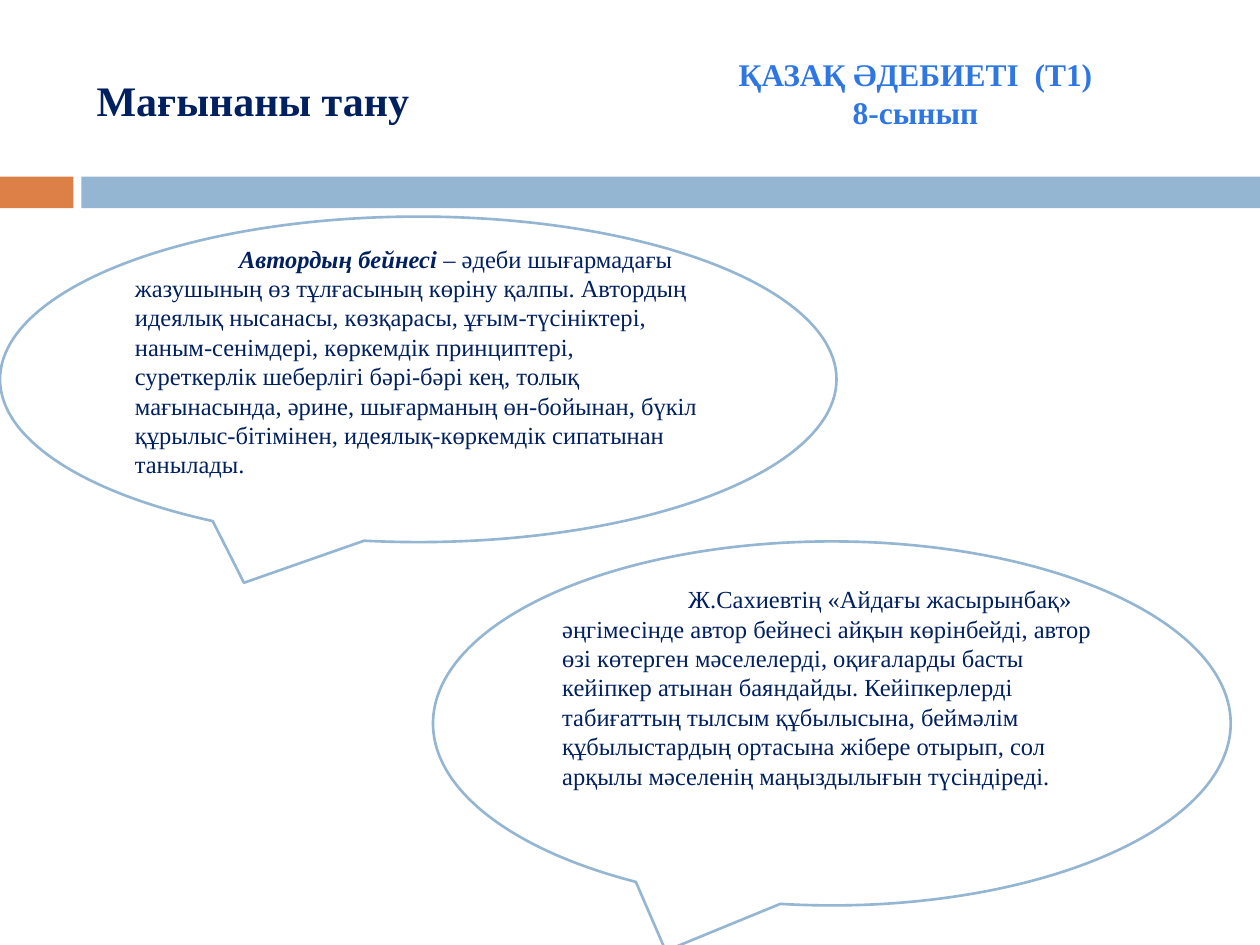
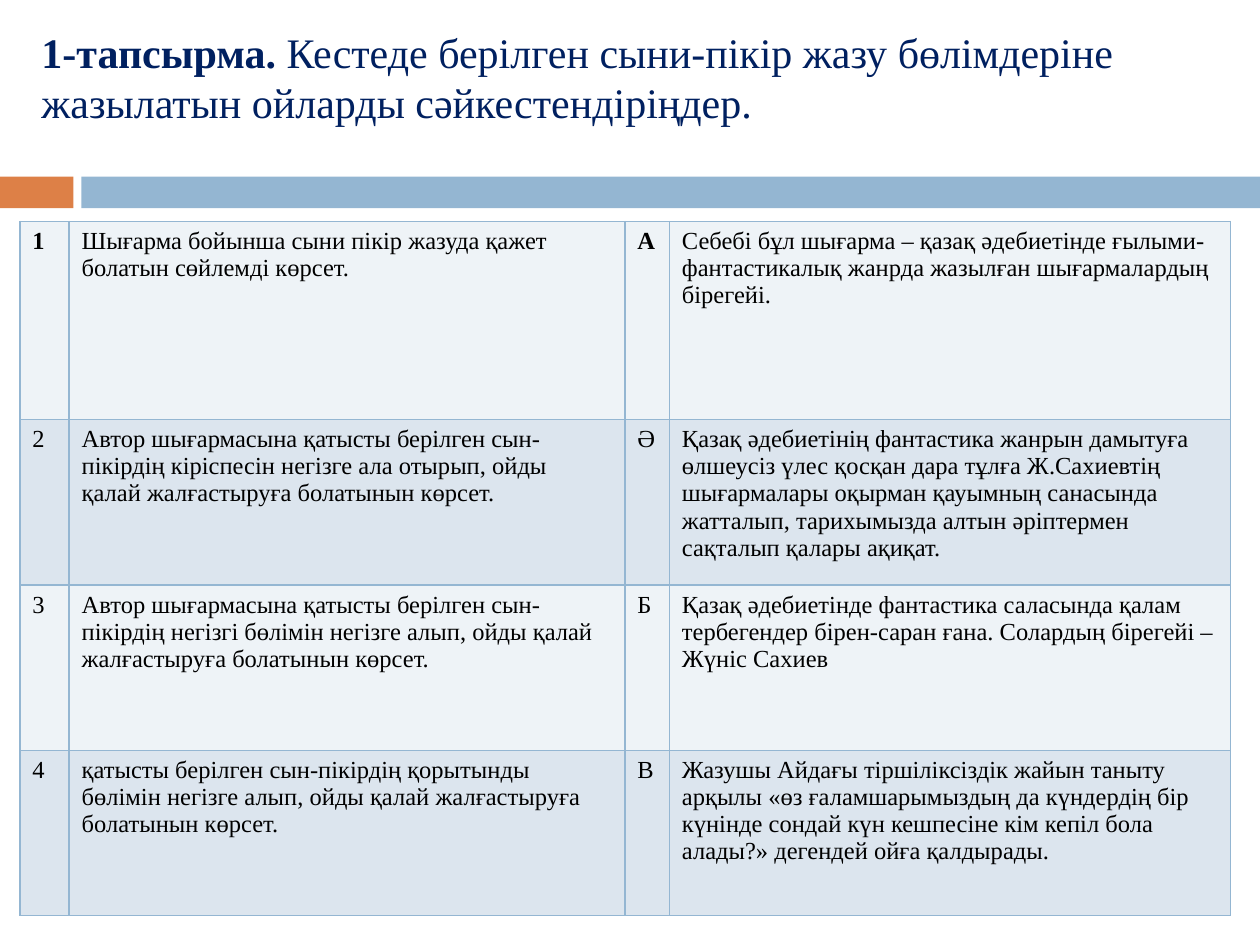
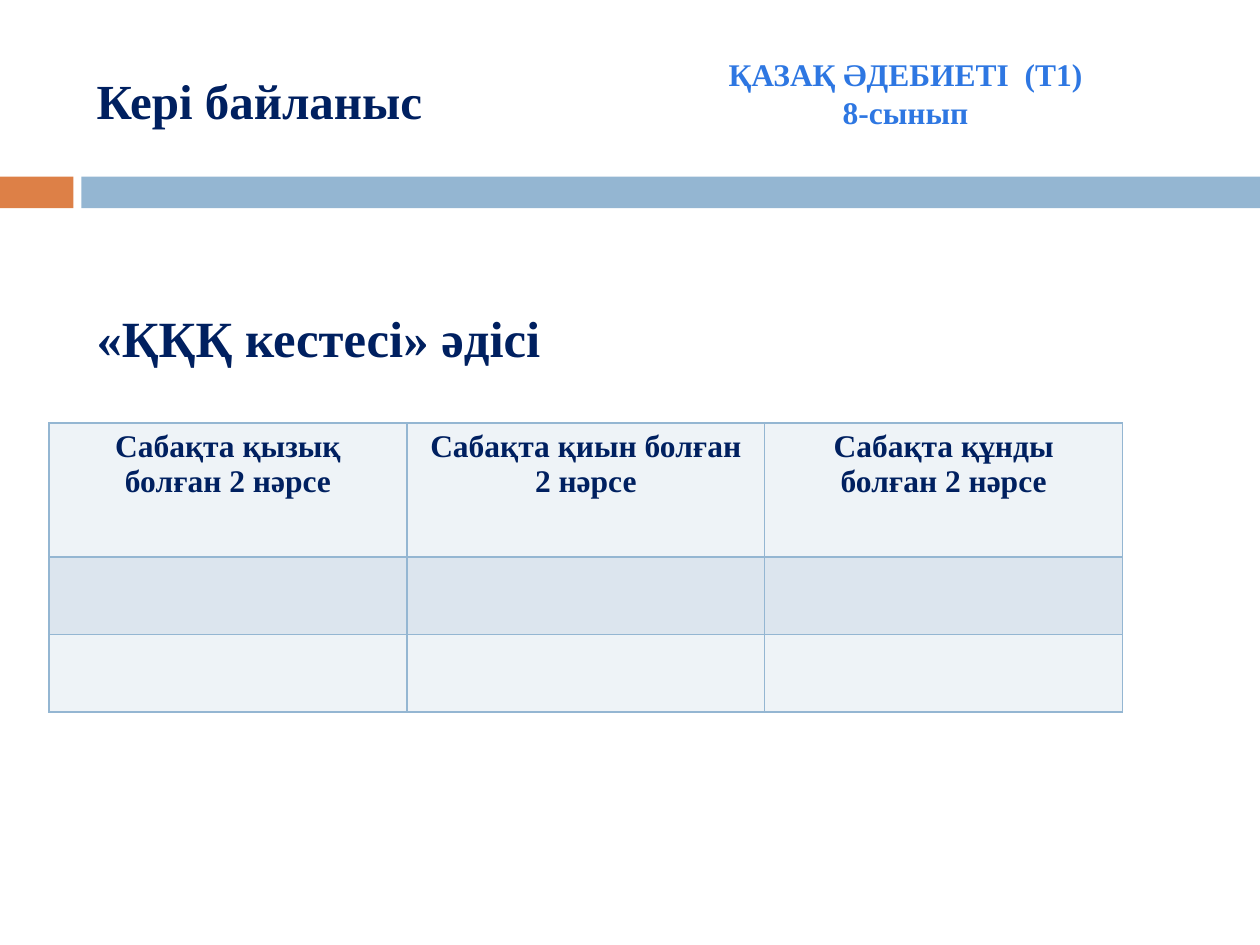
from pptx import Presentation
from pptx.dml.color import RGBColor
from pptx.enum.shapes import MSO_SHAPE
from pptx.enum.text import MSO_ANCHOR, MSO_AUTO_SIZE, PP_ALIGN
from pptx.oxml import parse_xml
from pptx.oxml.ns import nsdecls
from pptx.util import Pt

LEFT, CENTER = PP_ALIGN.LEFT, PP_ALIGN.CENTER
MIDDLE, TOP = MSO_ANCHOR.MIDDLE, MSO_ANCHOR.TOP
FIXED = MSO_AUTO_SIZE.NONE
RECT, BUBBLE = MSO_SHAPE.RECTANGLE, MSO_SHAPE.OVAL_CALLOUT
FONT = "Times New Roman"
HEX = {
    "white": "FFFFFF", "black": "000000", "navy": "002060", "sky": "2E77E2",
    "blue": "94B6D2", "orange": "DD8047", "light": "EEF3F7", "mid": "DCE5EE",
}
RGB = {name: RGBColor.from_string(code) for name, code in HEX.items()}


def write(frame, paras, size, color="navy", align=LEFT):
    """Fill a frame; each paragraph is a list of (text, style), style from "bi"."""
    frame.word_wrap = True
    for i, runs in enumerate(paras):
        para = frame.add_paragraph() if i else frame.paragraphs[0]
        para.alignment = align
        for text, style in runs:
            run = para.add_run()
            run.text = text
            font = run.font
            font.name, font.size = FONT, Pt(size)
            font.bold, font.italic = "b" in style, "i" in style
            font.color.rgb = RGB[color]


def grid(slide, left, top, cols, rows, cells, size, color, align):
    """Add a banded table with thin blue borders."""
    frame = slide.shapes.add_table(len(rows), len(cols), Pt(left), Pt(top),
                                   Pt(sum(cols)), Pt(sum(rows)))
    table = frame.table
    table.first_row = table.horz_banding = False
    for col, width in zip(table.columns, cols):
        col.width = Pt(width)
    for r, (row, height) in enumerate(zip(table.rows, rows)):
        row.height = Pt(height)
        for c, cell in enumerate(row.cells):
            props = cell._tc.get_or_add_tcPr()
            for side in "LRTB":
                props.append(parse_xml(
                    f'<a:ln{side} {nsdecls("a")} w="{Pt(1)}"><a:solidFill>'
                    f'<a:srgbClr val="{HEX["blue"]}"/></a:solidFill></a:ln{side}>'))
            cell.fill.solid()
            cell.fill.fore_color.rgb = RGB["mid" if r % 2 else "light"]
            if r < len(cells):
                write(cell.text_frame, cells[r][c], size, color, align)


deck = Presentation()
deck.slide_width, deck.slide_height = Pt(720), Pt(540)

# Slides and their titles: layout, left, width, bottom inset, size, runs
heads = [
    (5, 48, 642, 3.6, 24, [("Мағынаны тану", "b")]),
    (5, 16.5, 692, 30, 24, [
        ("1-тапсырма. ", "b"),
        ("Кестеде берілген сыни-пікір жазу бөлімдеріне "
         "жазылатын ойларды сәйкестендіріңдер.", "")]),
    (1, 48, 642, 3.6, 28, [("Кері байланыс", "b")]),
]
for kind, left, width, inset, size, runs in heads:
    slide = deck.slides.add_slide(deck.slide_layouts[kind])
    title = slide.shapes.title
    title.left, title.top, title.width, title.height = (
        Pt(left), Pt(18), Pt(width), Pt(78))
    frame = title.text_frame
    frame.auto_size, frame.vertical_anchor = FIXED, MIDDLE
    frame.margin_bottom = Pt(inset)
    write(frame, [runs], size)
sense, task, back = deck.slides

# Bands, moved to the master so that every slide shows them
tree = deck.slide_master.element.cSld.spTree
for spot, (left, width, color) in enumerate([(0, 42, "orange"), (46.5, 673.5, "blue")]):
    band = sense.shapes.add_shape(RECT, Pt(left), Pt(101), Pt(width), Pt(18))
    band.shadow.inherit = False
    band.fill.solid()
    band.fill.fore_color.rgb = RGB[color]
    band.line.fill.background()
    tree.insert(2 + spot, band.element)

# Slide 1: speech bubbles
bubbles = [
    (0, 123.8, 478, 186, 24.3, 59.5, [
        ("Автордың бейнесі", "bi"),
        (" – әдеби шығармадағы жазушының өз тұлғасының көріну қалпы. Автордың "
         "идеялық нысанасы, көзқарасы, ұғым-түсініктері, наным-сенімдері, "
         "көркемдік принциптері, суреткерлік шеберлігі бәрі-бәрі кең, толық "
         "мағынасында, әрине, шығарманың өн-бойынан, бүкіл құрылыс-бітімінен, "
         "идеялық-көркемдік сипатынан танылады.", "")]),
    (247.5, 309.4, 455.8, 208, 45, 72, [
        ("Ж.Сахиевтің «Айдағы жасырынбақ» әңгімесінде автор бейнесі айқын "
         "көрінбейді, автор өзі көтерген мәселелерді, оқиғаларды басты кейіпкер "
         "атынан баяндайды. Кейіпкерлерді табиғаттың тылсым құбылысына, беймәлім "
         "құбылыстардың ортасына жібере отырып, сол арқылы мәселенің "
         "маңыздылығын түсіндіреді.", "")]),
]
for left, top, width, height, inset, indent, runs in bubbles:
    bubble = sense.shapes.add_shape(BUBBLE, Pt(left), Pt(top), Pt(width), Pt(height))
    bubble.shadow.inherit = False
    bubble.fill.solid()
    bubble.fill.fore_color.rgb = RGB["white"]
    bubble.line.color.rgb = RGB["blue"]
    bubble.line.width = Pt(1.5)
    frame = bubble.text_frame
    frame.vertical_anchor, frame.margin_bottom = MIDDLE, Pt(inset)
    write(frame, [runs], 14)
    frame.paragraphs[0]._p.get_or_add_pPr().set("indent", str(Pt(indent)))

# Slide 2: matching table
pairs = [
    ("1", "Шығарма бойынша сыни пікір жазуда қажет болатын сөйлемді көрсет.",
     "А", "Себебі бұл шығарма – қазақ әдебиетінде ғылыми-фантастикалық жанрда "
     "жазылған шығармалардың бірегейі."),
    ("2", "Автор шығармасына қатысты берілген сын-пікірдің кіріспесін негізге ала "
     "отырып, ойды қалай жалғастыруға болатынын көрсет.",
     "Ә", "Қазақ әдебиетінің фантастика жанрын дамытуға өлшеусіз үлес қосқан дара "
     "тұлға Ж.Сахиевтің шығармалары оқырман қауымның санасында жатталып, "
     "тарихымызда алтын әріптермен сақталып қалары ақиқат."),
    ("3", "Автор шығармасына қатысты берілген сын-пікірдің негізгі бөлімін негізге "
     "алып, ойды қалай жалғастыруға болатынын көрсет.",
     "Б", "Қазақ әдебиетінде фантастика саласында қалам тербегендер бірен-саран "
     "ғана. Солардың бірегейі – Жүніс Сахиев"),
    ("4", "қатысты берілген сын-пікірдің қорытынды бөлімін негізге алып, ойды қалай "
     "жалғастыруға болатынын көрсет.",
     "В", "Жазушы Айдағы тіршіліксіздік жайын таныту арқылы «өз ғаламшарымыздың да "
     "күндердің бір күнінде сондай күн кешпесіне кім кепіл бола алады?» дегендей "
     "ойға қалдырады."),
]
cells = [[[[(text, "b" if text in ("1", "А") else "")]] for text in pair]
         for pair in pairs]
grid(task, 11.3, 126.6, [28.2, 317.6, 25.4, 320.6], [113.2] + [94.5] * 3,
     cells, 14, "black", LEFT)

# Slide 3: method name and feedback table
body = back.placeholders[1]
body.left, body.top, body.width, body.height = Pt(48), Pt(126), Pt(642), Pt(354)
frame = body.text_frame
frame.auto_size, frame.vertical_anchor, frame.margin_top = FIXED, TOP, Pt(49)
write(frame, [[("«ҚҚҚ кестесі» әдісі", "b")]], 29)
para = frame.paragraphs[0]
para.space_before = Pt(0)
props = para._p.get_or_add_pPr()
props.set("marL", "0")
props.set("indent", "0")
props.append(parse_xml(f'<a:buNone {nsdecls("a")}/>'))

asks = [["Сабақта қызық", "болған 2 нәрсе"], ["Сабақта қиын болған 2 нәрсе"],
        ["Сабақта құнды", "болған 2 нәрсе"]]
cells = [[[[(line, "b")] for line in ask] for ask in asks]]
grid(back, 28, 241.8, [204.5] * 3, [76.4, 44.4, 44.4], cells, 18, "navy", CENTER)

# Subject label on the first and last slides
for slide, left in [(sense, 343.2), (back, 337.5)]:
    label = slide.shapes.add_textbox(Pt(left), Pt(28), Pt(360), Pt(51))
    write(label.text_frame, [[("ҚАЗАҚ ӘДЕБИЕТІ  (Т1)", "b")], [("8-сынып", "b")]],
          18, "sky", CENTER)

deck.save("out.pptx")
